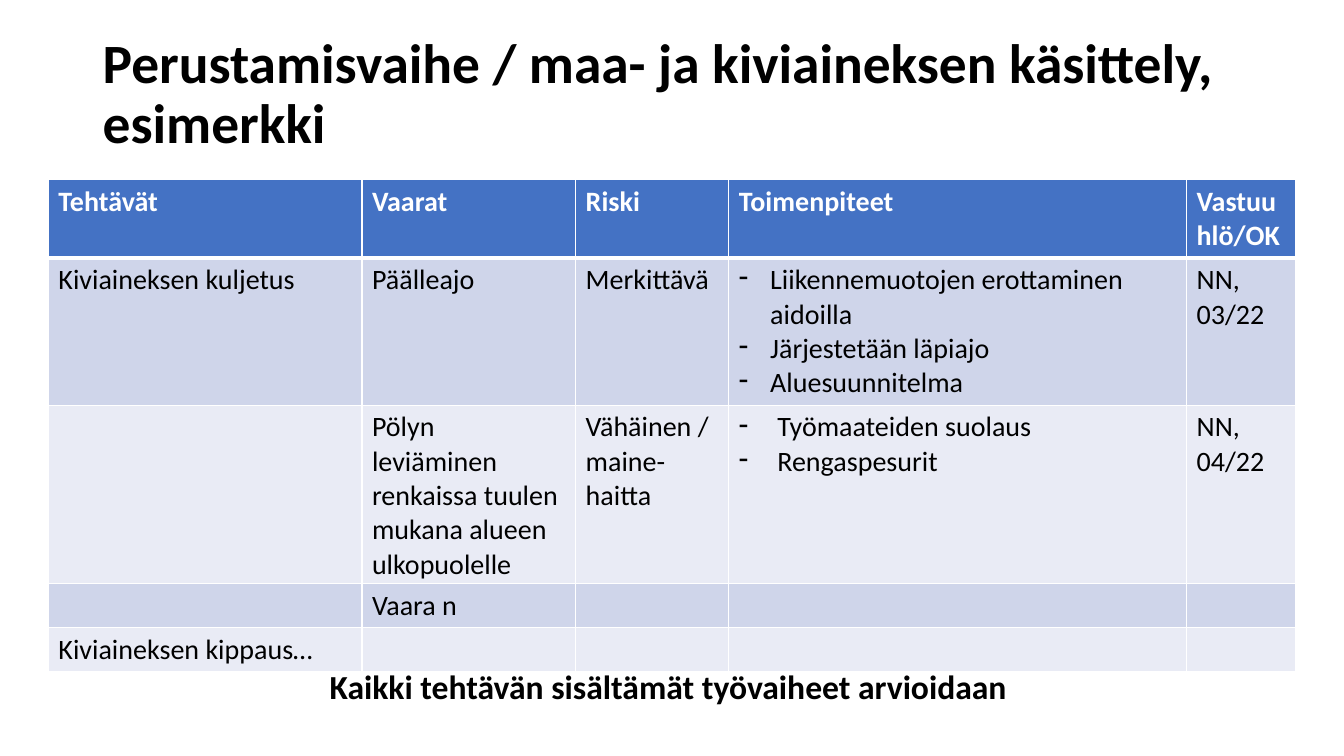
from dataclasses import dataclass

from lxml import etree
from pptx import Presentation
from pptx import util as u
from pptx.dml.color import RGBColor
from pptx.enum import text
from pptx.oxml.ns import qn


@dataclass(frozen=True)
class Theme:
    font: str = "Calibri"
    ink: str = "000000"
    white: str = "FFFFFF"
    head: str = "4472C4"
    bands: tuple = ("CFD5EA", "E9EBF5")
    title: float = 39.6
    body: int = 20
    note: int = 24
    thin: int = 1
    thick: int = 3


THEME = Theme()
COLS = (311, 212, 152, 454, 108)
ROWS = (78, 146, 146, 44, 44)

# A list is a dashed list; its indent depends on the row
CELLS = (
    ("Tehtävät", "Vaarat", "Riski", "Toimenpiteet", "Vastuuhlö/OK"),
    ("Kiviaineksen kuljetus", "Päälleajo", "Merkittävä",
     ["Liikennemuotojen erottaminen aidoilla", "Järjestetään läpiajo",
      "Aluesuunnitelma"], "NN, 03/22"),
    ("", "Pölyn leviäminen renkaissa tuulen mukana alueen ulkopuolelle",
     "Vähäinen / maine-haitta",
     ["Työmaateiden suolaus", "Rengaspesurit"], "NN, 04/22"),
    ("", "Vaara n", "", "", ""),
    ("Kiviaineksen kippaus…", "", "", "", ""),
)
INDENTS = {1: 31, 2: 38}


def px(n):
    """100 px make one inch."""
    return u.Emu(n * 9144)


def style(para, size, color, bold=False):
    font = para.font
    font.name, font.size, font.bold = THEME.font, u.Pt(size), bold
    font.color.rgb = RGBColor.from_string(color)


def dash(para, indent):
    props = para._p.get_or_add_pPr()
    props.set("marL", str(px(indent)))
    props.set("indent", str(-px(indent)))
    mark = etree.Element(qn("a:buChar"), char="-")
    props.insert(0, mark)


def edge(cell, side, width):
    line = etree.SubElement(cell._tc.get_or_add_tcPr(), qn("a:ln" + side),
                            w=str(u.Pt(width)))
    fill = etree.SubElement(line, qn("a:solidFill"))
    etree.SubElement(fill, qn("a:srgbClr"), val=THEME.white)


def add_text(slide, box, words, size, wrap=True):
    frame = slide.shapes.add_textbox(*map(px, box)).text_frame
    frame.word_wrap = wrap
    frame.vertical_anchor = text.MSO_ANCHOR.MIDDLE
    para = frame.paragraphs[0]
    para.text = words
    style(para, size, THEME.ink, True)
    return frame


def fill_cell(cell, words, row):
    head = row == 0
    # Borders: a thick rule parts the header from the body
    for side in "LRTB":
        rule = (row, side) in ((0, "B"), (1, "T"))
        edge(cell, side, THEME.thick if rule else THEME.thin)
    cell.fill.solid()
    shade = THEME.head if head else THEME.bands[(row - 1) % 2]
    cell.fill.fore_color.rgb = RGBColor.from_string(shade)

    # Wording
    listed = isinstance(words, list)
    cell.text = "\n".join(words) if listed else words
    for para in cell.text_frame.paragraphs:
        style(para, THEME.body, THEME.white if head else THEME.ink, head)
        if listed:
            dash(para, INDENTS[row])


def add_grid(slide, left, top):
    table = slide.shapes.add_table(
        len(ROWS), len(COLS), px(left), px(top),
        px(sum(COLS)), px(sum(ROWS))).table
    for col, width in zip(table.columns, COLS):
        col.width = px(width)
    for r, (height, line) in enumerate(zip(ROWS, CELLS)):
        table.rows[r].height = px(height)
        for c, words in enumerate(line):
            fill_cell(table.cell(r, c), words, r)


def main():
    deck = Presentation()
    deck.slide_width, deck.slide_height = px(1333), px(750)
    slide = deck.slides.add_slide(deck.slide_layouts[6])

    # Title
    title = add_text(slide, (92, 40, 1150, 109),
                     "Perustamisvaihe / maa- ja kiviaineksen käsittely, "
                     "esimerkki", THEME.title)
    title.paragraphs[0].line_spacing = 0.9

    # Risk table
    add_grid(slide, 48, 178)

    # Closing note
    note = add_text(slide, (317, 656, 699, 50),
                    "Kaikki tehtävän sisältämät työvaiheet arvioidaan",
                    THEME.note, wrap=False)
    note.auto_size = text.MSO_AUTO_SIZE.SHAPE_TO_FIT_TEXT

    deck.save("out.pptx")


if __name__ == "__main__":
    main()
